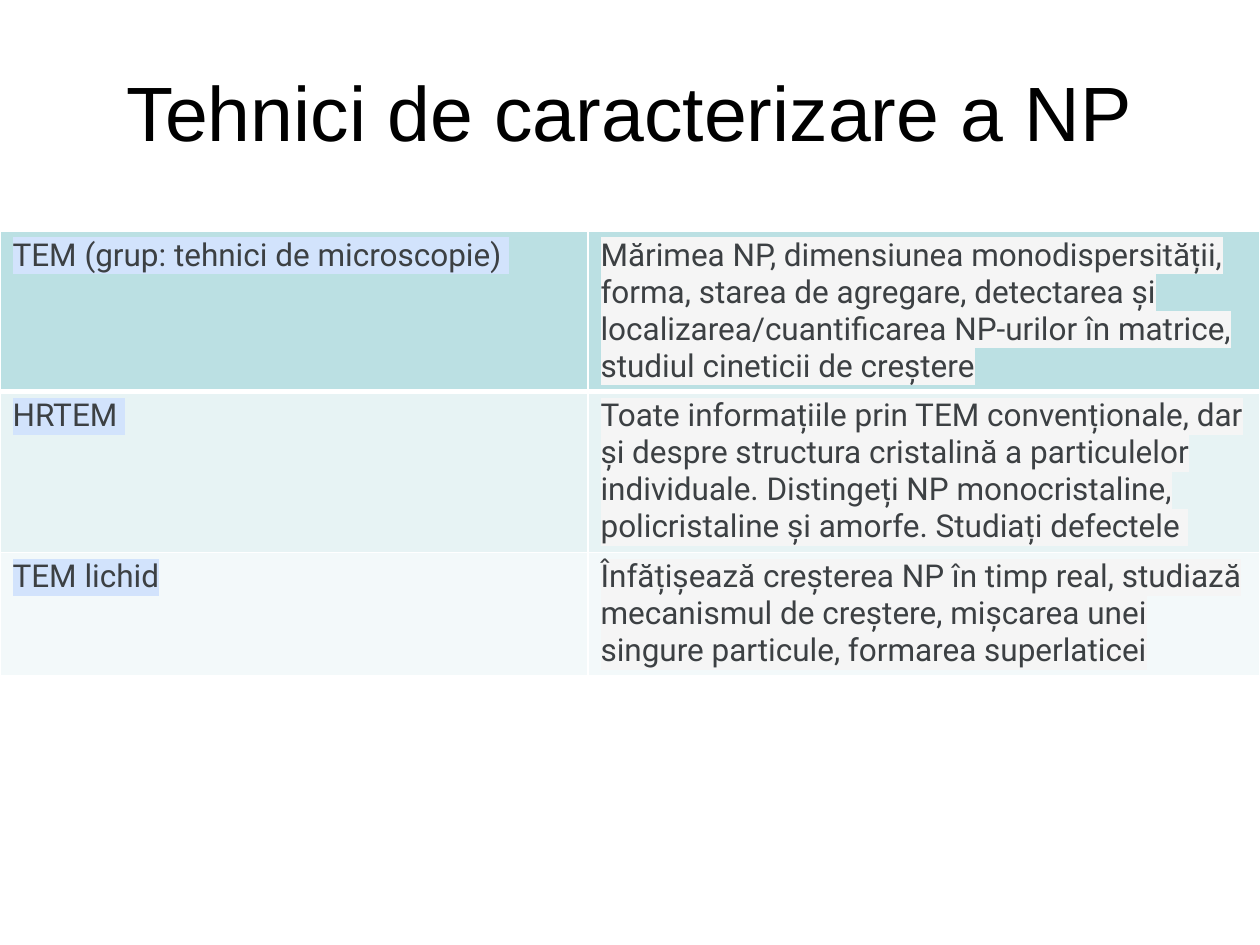
from dataclasses import dataclass

import pptx
import pptx.dml.color
import pptx.enum.text
import pptx.oxml
import pptx.oxml.ns
import pptx.util

EMU_PER_PX = 914400 // 126


@dataclass(frozen=True)
class Theme:
    title_font: str = "Arial"
    title_size: int = 44
    title_color: str = "000000"
    body_font: str = "Roboto"
    body_size: int = 18
    body_color: str = "3C4043"
    highlights: tuple[str, str] = ("D2E3FC", "F5F5F5")
    border: str = "FFFFFF"
    thin: int = 1
    thick: int = 3


@dataclass(frozen=True)
class Technique:
    name: str
    information: str
    fill: str
    height: int


THEME = Theme()
COLUMN_WIDTHS = (588, 672)
TECHNIQUES = (
    Technique(
        "TEM (grup: tehnici de microscopie) ",
        "Mărimea NP, dimensiunea monodispersității, forma, starea de agregare, "
        "detectarea și localizarea/cuantificarea NP-urilor în matrice, "
        "studiul cineticii de creștere",
        "BBE0E3", 160,
    ),
    Technique(
        "HRTEM ",
        "Toate informațiile prin TEM convenționale, dar și despre structura "
        "cristalină a particulelor individuale. Distingeți NP monocristaline, "
        "policristaline și amorfe. Studiați defectele ",
        "E7F3F4", 161,
    ),
    Technique(
        "TEM lichid",
        "Înfățișează creșterea NP în timp real, studiază mecanismul de creștere, "
        "mișcarea unei singure particule, formarea superlaticei",
        "F3F9FA", 123,
    ),
)


def px(length: int) -> pptx.util.Emu:
    return pptx.util.Emu(length * EMU_PER_PX)


def rgb(color: str) -> pptx.dml.color.RGBColor:
    return pptx.dml.color.RGBColor.from_string(color)


def color_element(tag: str, color: str, attributes: str = "", inner: str = "") -> str:
    namespace = pptx.oxml.ns.nsdecls("a")
    return f'<a:{tag} {namespace}{attributes}>{inner}<a:srgbClr val="{color}"/></a:{tag}>'


def format_font(font, name: str, size: int, color: str) -> None:
    font.name = name
    font.size = pptx.util.Pt(size)
    font.color.rgb = rgb(color)


def highlight(run, color: str) -> None:
    latin = run.font._element.find(pptx.oxml.ns.qn("a:latin"))
    latin.addprevious(pptx.oxml.parse_xml(color_element("highlight", color)))


def set_borders(cell, top: int, bottom: int) -> None:
    properties = cell._tc.get_or_add_tcPr()
    widths = {"lnL": THEME.thin, "lnR": THEME.thin, "lnT": top, "lnB": bottom}
    for position, (side, width) in enumerate(widths.items()):
        line = pptx.oxml.parse_xml(
            f'<a:{side} {pptx.oxml.ns.nsdecls("a")} w="{pptx.util.Pt(width)}">'
            f'{color_element("solidFill", THEME.border)}</a:{side}>'
        )
        properties.insert(position, line)


def add_title(slide, text: str) -> None:
    title = slide.shapes.title
    title.left, title.top, title.width, title.height = px(63), px(32), px(1134), px(157)
    text_frame = title.text_frame
    text_frame.text = text
    text_frame.vertical_anchor = pptx.enum.text.MSO_ANCHOR.MIDDLE
    paragraph = text_frame.paragraphs[0]
    paragraph.alignment = pptx.enum.text.PP_ALIGN.CENTER
    format_font(paragraph.runs[0].font, THEME.title_font, THEME.title_size, THEME.title_color)


def fill_cell(cell, text: str, fill: str, highlight_color: str) -> None:
    cell.text_frame.text = text
    run = cell.text_frame.paragraphs[0].runs[0]
    format_font(run.font, THEME.body_font, THEME.body_size, THEME.body_color)
    highlight(run, highlight_color)
    cell.fill.solid()
    cell.fill.fore_color.rgb = rgb(fill)


def add_technique_table(slide, techniques: tuple[Technique, ...]) -> None:
    height = sum(technique.height for technique in techniques)
    table = slide.shapes.add_table(
        len(techniques), len(COLUMN_WIDTHS), px(0), px(231), px(sum(COLUMN_WIDTHS)), px(height)
    ).table
    table.first_row = False
    table.horz_banding = False
    for column, width in zip(table.columns, COLUMN_WIDTHS):
        column.width = px(width)
    for row_index, technique in enumerate(techniques):
        row = table.rows[row_index]
        row.height = px(technique.height)
        top = THEME.thick if row_index == 1 else THEME.thin
        bottom = THEME.thick if row_index == 0 else THEME.thin
        texts = (technique.name, technique.information)
        for cell, text, highlight_color in zip(row.cells, texts, THEME.highlights):
            fill_cell(cell, text, technique.fill, highlight_color)
            set_borders(cell, top, bottom)


def main() -> None:
    presentation = pptx.Presentation()
    presentation.slide_width, presentation.slide_height = px(1260), px(945)
    slide = presentation.slides.add_slide(presentation.slide_layouts[5])
    add_title(slide, "Tehnici de caracterizare a NP")
    add_technique_table(slide, TECHNIQUES)
    presentation.save("out.pptx")


if __name__ == "__main__":
    main()
